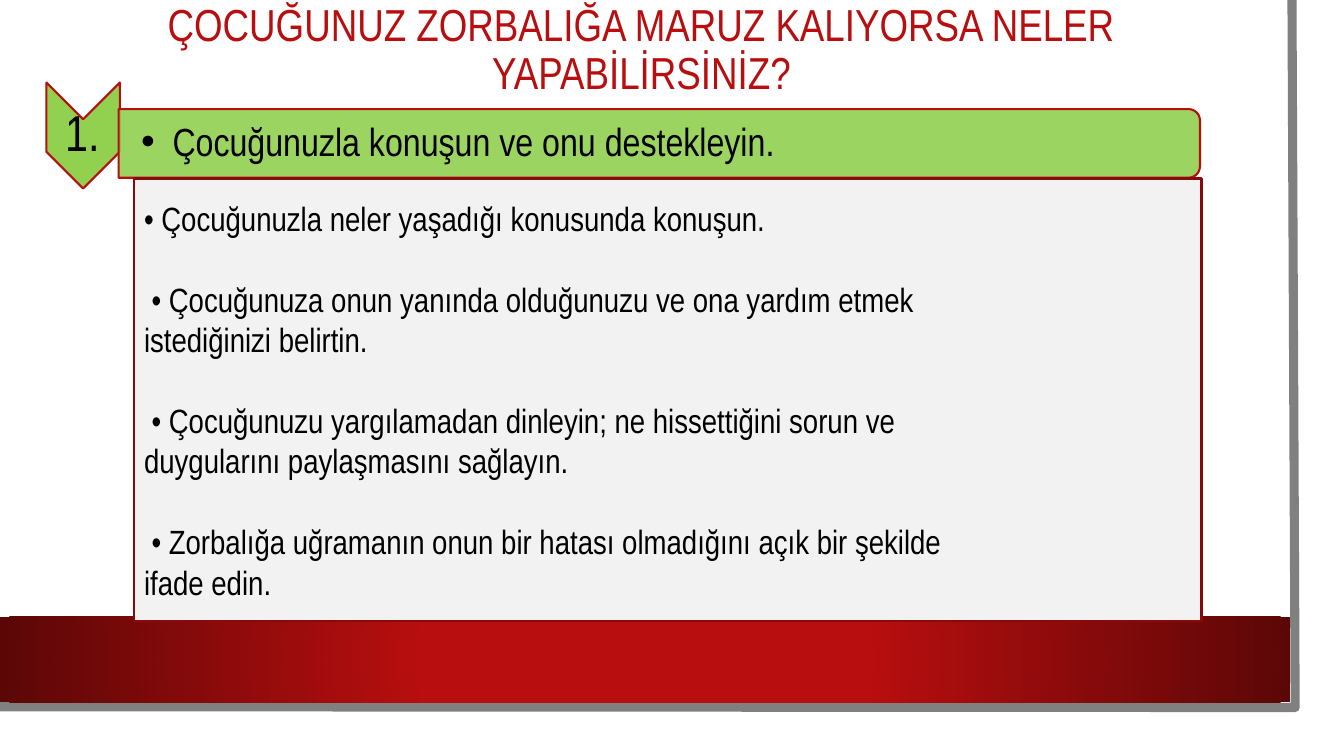
from lxml import etree
from pptx import Presentation
from pptx.dml.color import RGBColor
from pptx.enum.shapes import MSO_SHAPE as SHAPE
from pptx.enum.text import MSO_ANCHOR as ANCHOR, MSO_AUTO_SIZE as AUTO, PP_ALIGN as ALIGN
from pptx.oxml.ns import qn
from pptx.util import Cm, Pt

RED, GREEN, BLACK = "B80E0F", "92D050", "000000"


def rgb(value):
    return RGBColor.from_string(value)


def add_text(tf, text, size, color=BLACK, align=ALIGN.LEFT, spacing=1.0,
             before=0, margin=0, indent=0, bullet=None, insets=None):
    """Fill the first paragraph, or append one if it already has text."""
    p = tf.paragraphs[0] if not tf.text else tf.add_paragraph()
    tf.word_wrap, tf.auto_size, tf.vertical_anchor = True, AUTO.NONE, ANCHOR.MIDDLE
    if insets:
        tf.margin_left, tf.margin_top, tf.margin_right, tf.margin_bottom = map(Cm, insets)
    p.alignment, p.line_spacing = align, spacing
    p.space_before, p.space_after = Pt(before), Pt(0)
    pPr = p._p.get_or_add_pPr()
    pPr.set("marL", str(Cm(margin)))
    pPr.set("indent", str(Cm(indent)))
    if bullet:
        etree.SubElement(pPr, qn("a:buFont"), typeface="Arial")
        etree.SubElement(pPr, qn("a:buChar"), char=bullet)
    else:
        etree.SubElement(pPr, qn("a:buNone"))
    r = p.add_run()
    r.text = text
    r.font.size, r.font.name = Pt(size), "Arial Narrow"
    r.font.color.rgb = rgb(color)


prs = Presentation()
prs.slide_width, prs.slide_height = Cm(33.87), Cm(19.05)
s = prs.slides.add_slide(prs.slide_layouts[5])

# Title
title = s.shapes.title
title.left, title.top, title.width, title.height = Cm(1.73), Cm(0.53), Cm(28.88), Cm(1.52)
add_text(title.text_frame, "ÇOCUĞUNUZ ZORBALIĞA MARUZ KALIYORSA NELER YAPABİLİRSİNİZ?",
         32, color=RED, align=ALIGN.CENTER, spacing=0.9)

# Grey page edge
edge = s.shapes.build_freeform(Cm(32.56), Cm(0))
edge.add_line_segments([(Cm(32.64), Cm(17.83)), (Cm(-0.08), Cm(17.81))], close=False)
sp = edge.convert_to_shape()
sp.shadow.inherit = False
sp.fill.background()
sp.line.color.rgb, sp.line.width = rgb("808080"), Pt(6.5)

# Shapes: preset, left, top, width, height, rotation, fill, line
blocks = [
    (SHAPE.RECTANGLE, 0, 15.54, 32.51, 2.16, 0, None, None),
    (SHAPE.CHEVRON, 0.76, 2.49, 2.67, 1.85, 90, GREEN, RED),
    (SHAPE.ROUND_2_SAME_RECTANGLE, 15.75, -10.01, 1.73, 27.25, 90, GREEN, RED),
    (SHAPE.RECTANGLE, 3.38, 4.5, 26.9, 11.15, 0, "F2F2F2", "880A0B"),
]
shapes = []
for preset, left, top, width, height, rotation, fill, line in blocks:
    sp = s.shapes.add_shape(preset, Cm(left), Cm(top), Cm(width), Cm(height))
    sp.shadow.inherit = False
    sp.rotation = rotation
    if fill:
        sp.fill.solid()
        sp.fill.fore_color.rgb = rgb(fill)
        sp.line.color.rgb, sp.line.width = rgb(line), Pt(1.5)
    else:
        sp.line.fill.background()
    shapes.append(sp)
band, chevron, bar, panel = shapes

# Radial gradient of the bottom band
band.fill.gradient()
for stop, position, color in zip(band.fill.gradient_stops, (0.34, 1), (RED, "5C0707")):
    stop.position, stop.color.rgb = position, rgb(color)
grad = band._element.spPr.find(qn("a:gradFill"))
grad.remove(grad.find(qn("a:lin")))
radial = etree.SubElement(grad, qn("a:path"), path="circle")
etree.SubElement(radial, qn("a:fillToRect"), l="50000", t="50000", r="50000", b="50000")

# Slightly transparent heading bar
bar_color = bar._element.spPr.find(qn("a:solidFill")).find(qn("a:srgbClr"))
etree.SubElement(bar_color, qn("a:alpha"), val="90000")

# Step number and heading
number = s.shapes.add_textbox(Cm(1.17), Cm(3.02), Cm(1.85), Cm(0.79))
add_text(number.text_frame, "1.", 36, align=ALIGN.CENTER, spacing=0.9, insets=(0.08,) * 4)
heading = s.shapes.add_textbox(Cm(3), Cm(2.84), Cm(27.18), Cm(1.55))
add_text(heading.text_frame, "Çocuğunuzla konuşun ve onu destekleyin.", 28, spacing=0.9,
         margin=0.79, indent=-0.79, bullet="•", insets=(0.56, 0.05, 0.05, 0.05))

# Advice list
advice = [
    "Çocuğunuzla neler yaşadığı konusunda konuşun.",
    "Çocuğunuza onun yanında olduğunuzu ve ona yardım etmek istediğinizi belirtin.",
    "Çocuğunuzu yargılamadan dinleyin; ne hissettiğini sorun ve duygularını paylaşmasını sağlayın.",
    "Zorbalığa uğramanın onun bir hatası olmadığını açık bir şekilde ifade edin.",
]
for i, text in enumerate(advice):
    add_text(panel.text_frame, "• " + text, 24, before=29 if i else 0,
             indent=0.19 if i else 0, insets=(0.25, 0.13, 5.85, 0.13))

prs.save("out.pptx")
